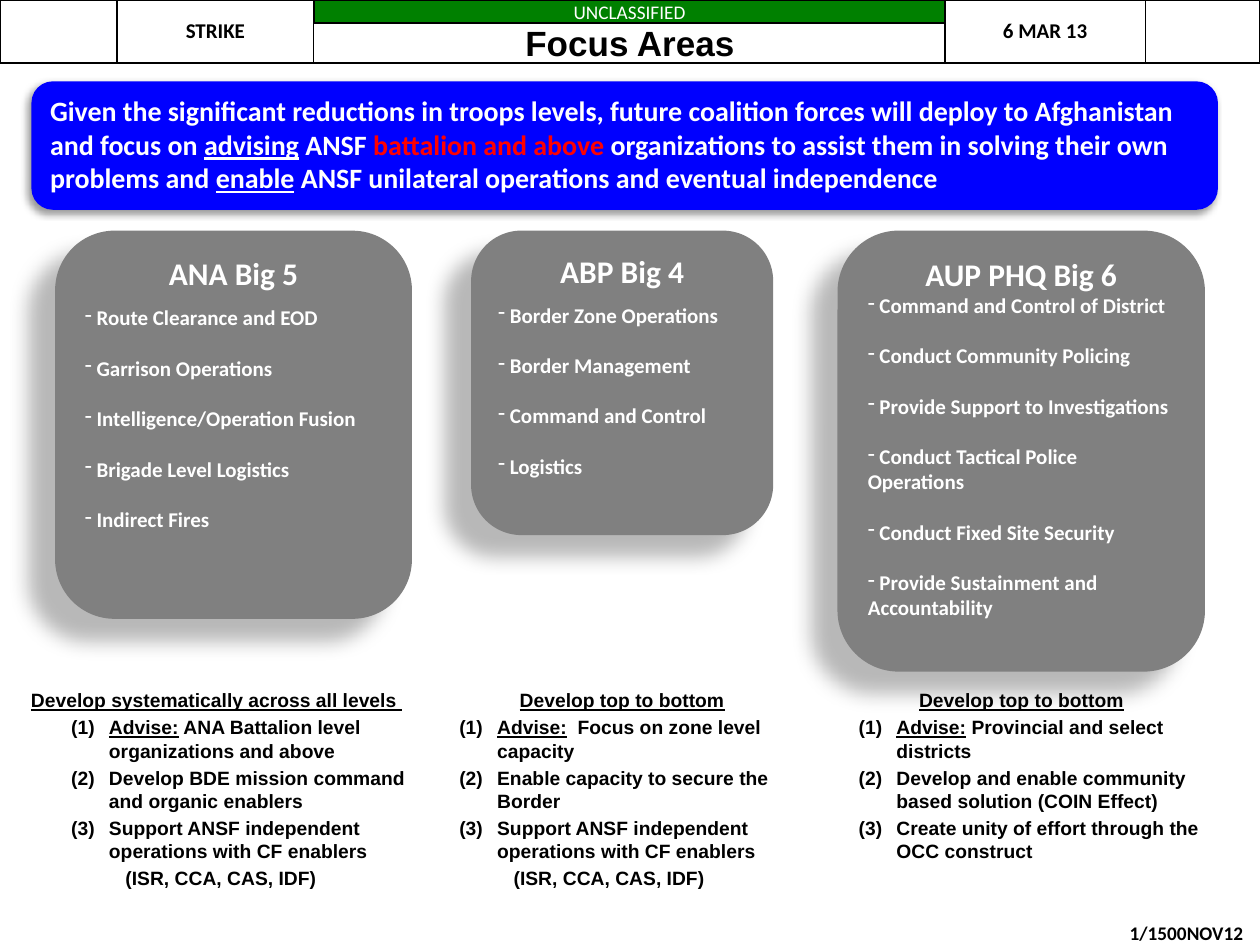
from dataclasses import dataclass

from lxml.etree import SubElement
from pptx import Presentation
from pptx.dml.color import RGBColor
from pptx.enum.shapes import MSO_SHAPE as Preset
from pptx.enum.text import MSO_ANCHOR as Anchor, PP_ALIGN as Align
from pptx.oxml.ns import qn
from pptx.util import Pt

BLACK = RGBColor(0x00, 0x00, 0x00)
WHITE = RGBColor(0xFF, 0xFF, 0xFF)
GREEN = RGBColor(0x00, 0x80, 0x00)
BLUE = RGBColor(0x00, 0x00, 0xFF)
GRAY = RGBColor(0x80, 0x80, 0x80)
RED = RGBColor(0xFF, 0x00, 0x00)


@dataclass(frozen=True)
class Frame:
    left: float
    top: float
    width: float
    height: float

    def lengths(self) -> tuple:
        return Pt(self.left), Pt(self.top), Pt(self.width), Pt(self.height)


@dataclass(frozen=True)
class Span:
    text: str
    underline: bool = False
    color: RGBColor | None = None


@dataclass(frozen=True)
class Style:
    size: float
    font: str = "Calibri"
    color: RGBColor = BLACK
    bold: bool = True


@dataclass(frozen=True)
class Shadow:
    opacity: int
    blur: float
    distance: float
    angle: int


@dataclass(frozen=True)
class Card:
    frame: Frame
    title: str
    first_gap: float
    items: tuple[str, ...]


@dataclass(frozen=True)
class Note:
    frame: Frame
    heading: str
    align: Align
    advice: str
    steps: tuple[str, ...]
    detail: str = ""


HEADER = Style(12)
BANNER = Style(11, color=WHITE, bold=False)
TITLE = Style(20, "Arial")
MISSION = Style(16, color=WHITE)
CARD_TITLE = Style(18, color=WHITE)
CARD_ITEM = Style(12, color=WHITE)
NOTE = Style(11, "Arial")
FOOTER = Style(11)

MISSION_SHADOW = Shadow(40, 4, 3, 135)
CARD_SHADOW = Shadow(28, 11.8, 19.7, 141)
ITEM_GAP = 14.4
NOTE_GAP = 2.2
CARD_TOP, NOTE_TOP, NOTE_WIDTH = 131.8, 390, 246.2

HEADER_WIDTHS = (67, 112.3, 360.7, 114.5, 65.5)
HEADER_TEXTS = ("", "STRIKE", "", "6 MAR 13", "")

MISSION_SPANS = (
    Span("Given the significant reductions in troops levels, future coalition forces "
         "will deploy to Afghanistan and focus on "),
    Span("advising", underline=True),
    Span(" ANSF "),
    Span("battalion and above", color=RED),
    Span(" organizations to assist them in solving their own problems and "),
    Span("enable", underline=True),
    Span(" ANSF unilateral operations and eventual independence"),
)

CARDS = (
    Card(Frame(31.5, CARD_TOP, 203.9, 221.8), "ANA Big 5", 7.3,
         ("Route Clearance and EOD", "Garrison Operations", "Intelligence/Operation Fusion",
          "Brigade Level Logistics", "Indirect Fires")),
    Card(Frame(269.2, CARD_TOP, 172.6, 174), "ABP Big 4", 7.3,
         ("Border Zone Operations", "Border Management", "Command and Control", "Logistics")),
    Card(Frame(478.6, CARD_TOP, 210, 252), "AUP PHQ Big 6", 0,
         ("Command and Control of District", "Conduct Community Policing",
          "Provide Support to Investigations", "Conduct Tactical Police Operations",
          "Conduct Fixed Site Security", "Provide Sustainment and Accountability")),
)

SUPPORT = "Support ANSF independent operations with CF enablers"
ENABLERS = "(ISR, CCA, CAS, IDF)"
NOTES = (
    Note(Frame(10.6, NOTE_TOP, NOTE_WIDTH, 132), "Develop systematically across all levels ",
         Align.LEFT, " ANA Battalion level organizations and above",
         ("Develop BDE mission command and organic enablers", SUPPORT), ENABLERS),
    Note(Frame(232.4, NOTE_TOP, NOTE_WIDTH, 126), "Develop top to bottom",
         Align.CENTER, "  Focus on zone level capacity",
         ("Enable capacity to secure the Border", SUPPORT), ENABLERS),
    Note(Frame(460.6, NOTE_TOP, NOTE_WIDTH, 120), "Develop top to bottom",
         Align.CENTER, " Provincial and select districts",
         ("Develop and enable community based solution (COIN Effect)",
          "Create unity of effort through the OCC construct")),
)


def write(para, style: Style, *spans: Span, align: Align = Align.LEFT, before: float = 0) -> None:
    para.alignment = align
    para.space_before = Pt(before)
    for span in spans:
        run = para.add_run()
        run.text = span.text
        font = run.font
        font.name, font.size, font.bold = style.font, Pt(style.size), style.bold
        font.underline = span.underline
        font.color.rgb = span.color or style.color


def indent(para, margin: float, first: float) -> None:
    props = para._p.get_or_add_pPr()
    props.set("marL", str(Pt(margin)))
    props.set("indent", str(Pt(first)))


def add_bullet(para, tag: str, **attributes: str) -> None:
    """Add a bullet that takes the font of the paragraph's text."""
    props = para._p.get_or_add_pPr()
    SubElement(props, qn("a:buFontTx"))
    SubElement(props, qn(tag), attributes)


def add_shadow(shape, shadow: Shadow) -> None:
    effects = shape._element.spPr.find(qn("a:effectLst"))
    outer = SubElement(effects, qn("a:outerShdw"), blurRad=str(Pt(shadow.blur)),
                       dist=str(Pt(shadow.distance)), dir=str(shadow.angle * 60000),
                       algn="ctr", rotWithShape="0")
    color = SubElement(outer, qn("a:srgbClr"), val=str(BLACK))
    SubElement(color, qn("a:alpha"), val=str(shadow.opacity * 1000))


def add_panel(page, preset: Preset, frame: Frame, fill: RGBColor):
    """Add a filled shape with no line and top-anchored text."""
    panel = page.shapes.add_shape(preset, *frame.lengths())
    panel.shadow.inherit = False
    panel.fill.solid()
    panel.fill.fore_color.rgb = fill
    panel.line.fill.background()
    panel.text_frame.word_wrap = True
    panel.text_frame.vertical_anchor = Anchor.TOP
    return panel


def add_text(page, frame: Frame, wrap: bool = True):
    text = page.shapes.add_textbox(*frame.lengths()).text_frame
    text.word_wrap = wrap
    return text


def add_header(page) -> None:
    table = page.shapes.add_table(1, len(HEADER_WIDTHS), *Frame(0, 0, 720, 36).lengths()).table
    table.first_row = table.horz_banding = False
    for column, width in zip(table.columns, HEADER_WIDTHS):
        column.width = Pt(width)
    for cell, label in zip(table.rows[0].cells, HEADER_TEXTS):
        props = cell._tc.get_or_add_tcPr()
        for side in ("a:lnL", "a:lnR", "a:lnT", "a:lnB"):
            edge = SubElement(props, qn(side), w=str(Pt(1)))
            SubElement(SubElement(edge, qn("a:solidFill")), qn("a:srgbClr"), val=str(BLACK))
        cell.fill.solid()
        cell.fill.fore_color.rgb = WHITE
        cell.vertical_anchor = Anchor.MIDDLE
        if label:
            write(cell.text_frame.paragraphs[0], HEADER, Span(label), align=Align.CENTER)

    banner = add_panel(page, Preset.RECTANGLE, Frame(179.6, 0, 360.4, 13.2), GREEN)
    banner.line.color.rgb = BLACK
    banner.line.width = Pt(1)
    text = banner.text_frame
    text.margin_left = text.margin_right = text.margin_top = text.margin_bottom = 0
    text.vertical_anchor = Anchor.MIDDLE
    write(text.paragraphs[0], BANNER, Span("UNCLASSIFIED"), align=Align.CENTER)

    title = add_text(page, Frame(36, 3.2, 648, 41.8))
    title.vertical_anchor = Anchor.MIDDLE
    write(title.paragraphs[0], TITLE, Span("Focus Areas"), align=Align.CENTER)


def add_card(page, card: Card) -> None:
    panel = add_panel(page, Preset.ROUNDED_RECTANGLE, card.frame, GRAY)
    add_shadow(panel, CARD_SHADOW)
    text = panel.text_frame
    write(text.paragraphs[0], CARD_TITLE, Span(card.title), align=Align.CENTER)
    for index, item in enumerate(card.items):
        para = text.add_paragraph()
        write(para, CARD_ITEM, Span(f" {item}"), before=ITEM_GAP if index else card.first_gap)
        add_bullet(para, "a:buChar", char="-")


def add_note(page, note: Note) -> None:
    text = add_text(page, note.frame)
    heading = text.paragraphs[0]
    write(heading, NOTE, Span(note.heading, underline=True), align=note.align)
    indent(heading, 8.6, -8.6)
    advice = (Span("Advise:", underline=True), Span(note.advice))
    for spans in (advice, *((Span(step),) for step in note.steps)):
        para = text.add_paragraph()
        para.level = 1
        write(para, NOTE, *spans, before=NOTE_GAP)
        indent(para, 44.6, -21.6)
        add_bullet(para, "a:buAutoNum", type="arabicParenBoth")
    if note.detail:
        para = text.add_paragraph()
        para.level = 1
        write(para, NOTE, Span(note.detail), before=NOTE_GAP)
        indent(para, 54, 0)


def main() -> None:
    deck = Presentation()
    deck.slide_width, deck.slide_height = Pt(720), Pt(540)
    page = deck.slides.add_slide(deck.slide_layouts[6])
    add_header(page)
    mission = add_panel(page, Preset.ROUNDED_RECTANGLE, Frame(18, 46.5, 678, 73.4), BLUE)
    add_shadow(mission, MISSION_SHADOW)
    write(mission.text_frame.paragraphs[0], MISSION, *MISSION_SPANS)
    for card in CARDS:
        add_card(page, card)
    for note in NOTES:
        add_note(page, note)
    footer = add_text(page, Frame(636, 523, 84, 17), wrap=False)
    footer.margin_bottom = 0
    write(footer.paragraphs[0], FOOTER, Span("1/1500NOV12"), align=Align.CENTER)
    deck.save("out.pptx")


if __name__ == "__main__":
    main()
